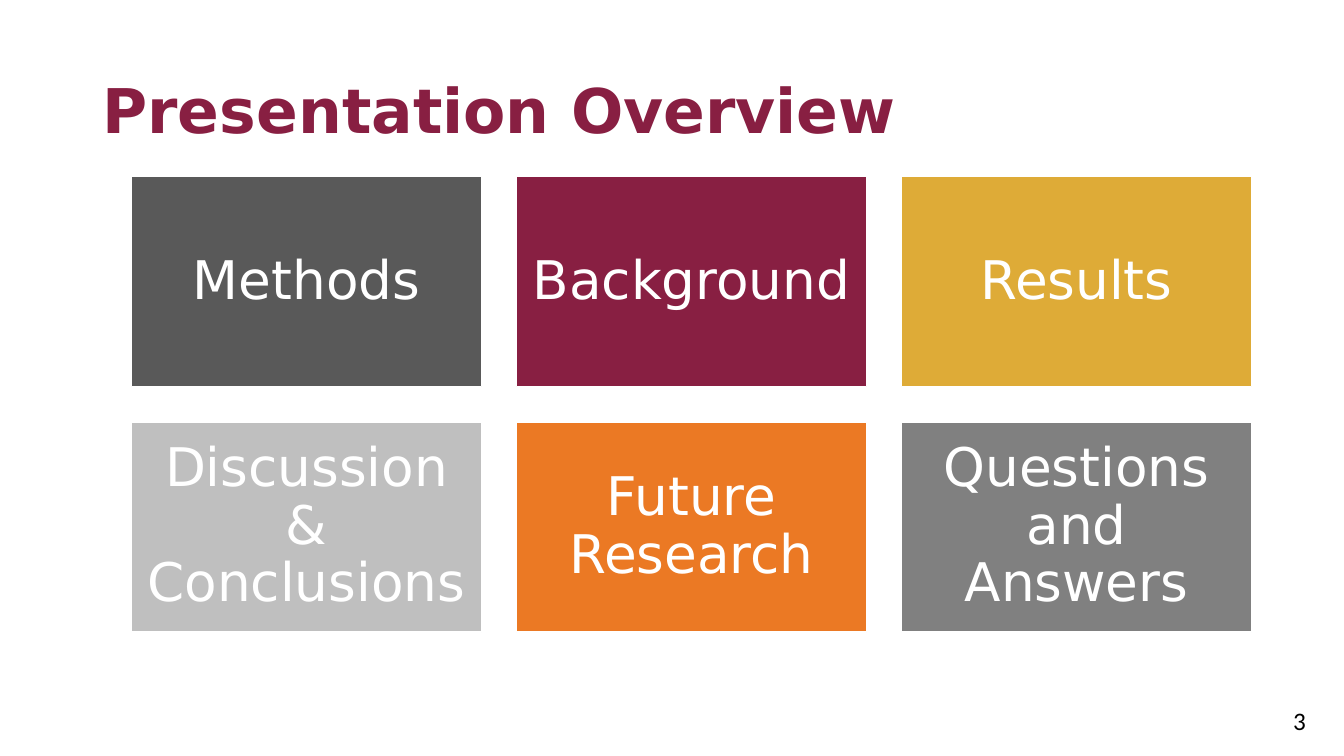
from pptx import Presentation
from pptx.dml.color import RGBColor
from pptx.enum.shapes import MSO_SHAPE
from pptx.enum.text import MSO_ANCHOR, PP_ALIGN
from pptx.util import Pt

RECTANGLE = MSO_SHAPE.RECTANGLE
TOP, MIDDLE = MSO_ANCHOR.TOP, MSO_ANCHOR.MIDDLE
LEFT, CENTER = PP_ALIGN.LEFT, PP_ALIGN.CENTER

HEADING_FONT = "DejaVu Sans"
NUMBER_FONT = "Calibri"
MAROON = "881F42"
WHITE = "FFFFFF"

COLUMNS = 3
GRID_LEFT, GRID_TOP = 94, 126.3
TILE_WIDTH, TILE_HEIGHT = 250, 150
COLUMN_STEP, ROW_STEP = 275, 175.2
TILE_INSET = 10

TOPICS = [
    ("Methods", "595959"),
    ("Background", MAROON),
    ("Results", "DEAB37"),
    ("Discussion & Conclusions", "BFBFBF"),
    ("Future Research", "EB7924"),
    ("Questions and Answers", "808080"),
]


def color(value):
    return RGBColor.from_string(value)


def write(box, text, size, font, ink, anchor=MIDDLE, align=LEFT, spacing=0.9, bold=False):
    frame = box.text_frame
    frame.word_wrap = True
    frame.vertical_anchor = anchor
    para = frame.paragraphs[0]
    para.alignment = align
    para.line_spacing = spacing
    span = para.add_run()
    span.text = text
    span.font.size = Pt(size)
    span.font.name = font
    span.font.bold = bold
    span.font.color.rgb = color(ink)


def add_text(page, left, top, width, height, text, size, font, ink, **style):
    box = page.shapes.add_textbox(Pt(left), Pt(top), Pt(width), Pt(height))
    write(box, text, size, font, ink, **style)


def add_tile(page, index, topic, fill):
    row, column = divmod(index, COLUMNS)
    tile = page.shapes.add_shape(
        RECTANGLE,
        Pt(GRID_LEFT + column * COLUMN_STEP),
        Pt(GRID_TOP + row * ROW_STEP),
        Pt(TILE_WIDTH),
        Pt(TILE_HEIGHT),
    )
    tile.shadow.inherit = False
    tile.fill.solid()
    tile.fill.fore_color.rgb = color(fill)
    tile.line.color.rgb = color(WHITE)
    tile.line.width = Pt(1)
    frame = tile.text_frame
    frame.margin_left = frame.margin_right = Pt(TILE_INSET)
    frame.margin_top = frame.margin_bottom = Pt(TILE_INSET)
    write(tile, topic, 38, HEADING_FONT, WHITE, align=CENTER)


def main():
    deck = Presentation()
    deck.slide_width, deck.slide_height = Pt(960), Pt(540)
    page = deck.slides.add_slide(deck.slide_layouts[6])
    add_text(page, 66.2, 28.8, 828, 104.4, "Presentation Overview", 44, HEADING_FONT, MAROON, bold=True)
    add_text(page, 916.6, 500.4, 43.2, 28.8, "3", 18, NUMBER_FONT, "000000", anchor=TOP, spacing=1.0)
    for index, (topic, fill) in enumerate(TOPICS):
        add_tile(page, index, topic, fill)
    deck.save("out.pptx")


if __name__ == "__main__":
    main()
